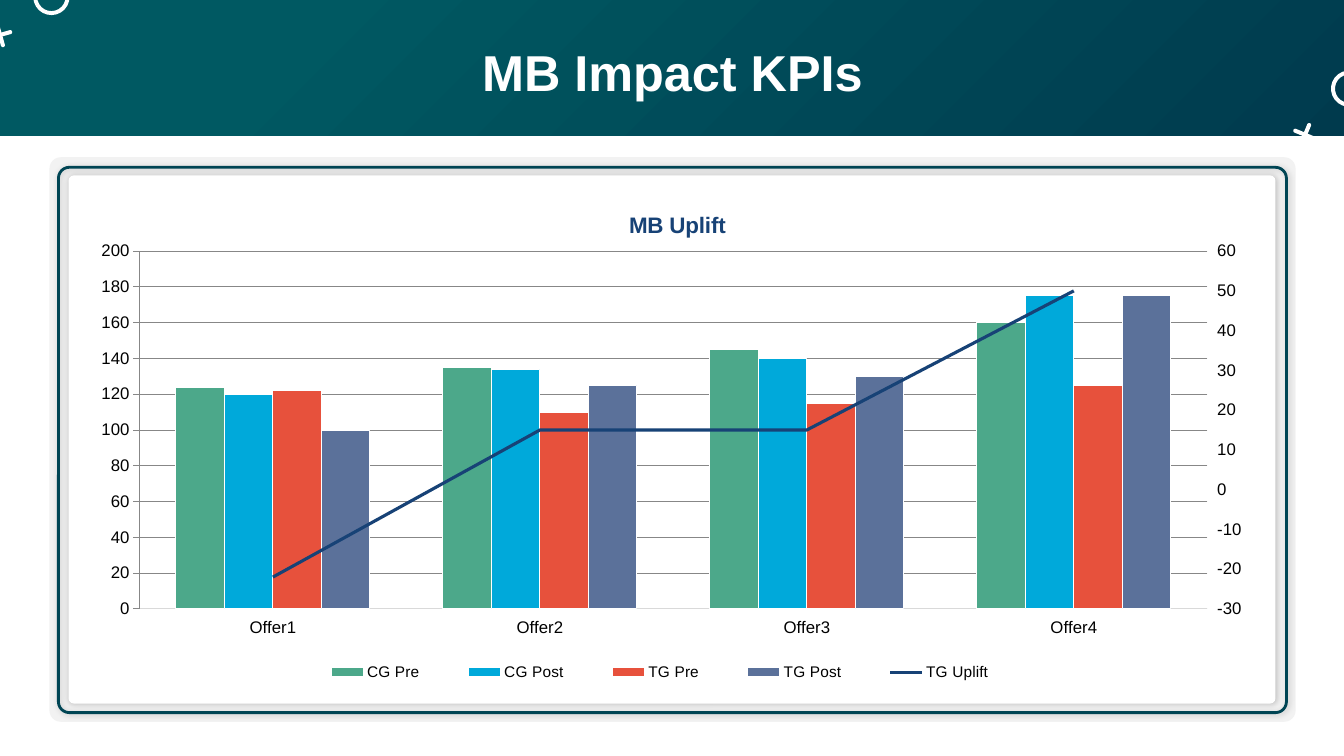
from pptx import Presentation
from pptx.chart.axis import ValueAxis
from pptx.chart.data import CategoryChartData
from pptx.dml.color import RGBColor
from pptx.enum.chart import (XL_CHART_TYPE, XL_LEGEND_POSITION, XL_MARKER_STYLE,
                             XL_TICK_LABEL_POSITION, XL_TICK_MARK)
from pptx.enum.shapes import MSO_SHAPE
from pptx.enum.text import MSO_ANCHOR, PP_ALIGN
from pptx.oxml import parse_xml
from pptx.oxml.ns import nsdecls, qn
from pptx.util import Inches, Pt

RECT, ROUND, DONUT = MSO_SHAPE.RECTANGLE, MSO_SHAPE.ROUNDED_RECTANGLE, MSO_SHAPE.DONUT
COLUMNS = XL_CHART_TYPE.COLUMN_CLUSTERED
TICK_NONE, TICK_OUT = XL_TICK_MARK.NONE, XL_TICK_MARK.OUTSIDE
LABELS_LOW, LABELS_HIGH = XL_TICK_LABEL_POSITION.LOW, XL_TICK_LABEL_POSITION.HIGH
LEGEND_BOTTOM, NO_MARKER = XL_LEGEND_POSITION.BOTTOM, XL_MARKER_STYLE.NONE
CENTER, MIDDLE = PP_ALIGN.CENTER, MSO_ANCHOR.MIDDLE

FONT = "Arial"
SLIDE_W, SLIDE_H = 13.33, 7.5
COLORS = {"white": "FFFFFF", "black": "000000", "night": "002942", "teal": "005962",
          "panel": "F2F2F2", "frame": "004554", "axis": "D9D9D9", "navy": "174276"}
OFFERS = ["Offer1", "Offer2", "Offer3", "Offer4"]
BARS = [("CG Pre", [124, 135, 145, 160], "4CA88A"),
        ("CG Post", [120, 134, 140, 175], "00A9DA"),
        ("TG Pre", [122, 110, 115, 125], "E7513C"),
        ("TG Post", [100, 125, 130, 175], "5B719A")]
UPLIFT = ("TG Uplift", [-22, 15, 15, 50])


def rgb(name):
    """Return the colour for a palette name or a hex string."""
    return RGBColor.from_string(COLORS.get(name, name))


def area(x, y, w, h):
    """Turn percentages of the slide into left, top, width, height."""
    return [Inches(v * side / 100) for v, side in
            zip((x, y, w, h), (SLIDE_W, SLIDE_H, SLIDE_W, SLIDE_H))]


def style_font(font, size, color, bold=False):
    """Apply size, weight, face and colour to a font."""
    for name, value in {"size": Pt(size), "bold": bold, "name": FONT}.items():
        setattr(font, name, value)
    font.color.rgb = rgb(color)


def style_line(line, color=None, width=0.75):
    """Colour a line, or hide it when no colour is given."""
    if color is None:
        line.fill.background()
    else:
        line.color.rgb, line.width = rgb(color), Pt(width)


def add_block(s, kind, box, fill=None, line=None, adj=None, rotation=0):
    """Add a preset shape without a shadow."""
    sp = s.shapes.add_shape(kind, *area(*box))
    sp.shadow.inherit = False
    sp.rotation = rotation
    if adj is not None:
        sp.adjustments[0] = adj
    if fill is None:
        sp.fill.background()
    else:
        sp.fill.solid()
        sp.fill.fore_color.rgb = rgb(fill)
    style_line(sp.line, line, 2)
    return sp


def add_soft_shadow(sp):
    """Give a shape a soft outer shadow."""
    effects = sp._element.spPr.find(qn("a:effectLst"))
    effects.append(parse_xml(
        f'<a:outerShdw {nsdecls("a")} blurRad="{Pt(4)}" dist="{Pt(1)}" dir="2700000" '
        f'rotWithShape="0"><a:srgbClr val="{COLORS["black"]}"><a:alpha val="20000"/>'
        '</a:srgbClr></a:outerShdw>'))


def add_backdrop(s):
    """Cover the slide with a radial gradient."""
    sp = add_block(s, RECT, (0, 0, 100, 100), "teal")
    stops = "".join(f'<a:gs pos="{pos * 1000}"><a:srgbClr val="{COLORS[name]}"/></a:gs>'
                    for pos, name in ((0, "night"), (85, "teal"), (100, "teal")))
    solid = sp._element.spPr.find(qn("a:solidFill"))
    solid.getparent().replace(solid, parse_xml(
        f'<a:gradFill {nsdecls("a")} rotWithShape="1"><a:gsLst>{stops}</a:gsLst>'
        '<a:path path="circle"><a:fillToRect l="100000" t="100000"/></a:path></a:gradFill>'))


def add_motif(s, ring, cross, rotation):
    """Draw a white ring and a white cross around their centres."""
    parts = [(DONUT, ring, 0.36, 0.36, 0.11),
             (ROUND, cross, 0.04, 0.25, 0.5), (ROUND, cross, 0.25, 0.04, 0.5)]
    for kind, (cx, cy), w, h, adj in parts:
        w, h = w / SLIDE_W * 100, h / SLIDE_H * 100
        add_block(s, kind, (cx - w / 2, cy - h / 2, w, h), "white", adj=adj, rotation=rotation)


def add_title(s, text):
    """Write the centred slide heading."""
    tf = s.shapes.add_textbox(*area(3.68, 5.2, 92.72, 8.53)).text_frame
    tf.word_wrap, tf.vertical_anchor = True, MIDDLE
    p = tf.paragraphs[0]
    p.alignment = CENTER
    r = p.add_run()
    r.text = text
    style_font(r.font, 36, "white", True)


def set_layout(parent, index, **values):
    """Place a chart part by shares of the chart's size."""
    for old in parent.findall(qn("c:layout")):
        parent.remove(old)
    target = '<c:layoutTarget val="outer"/>' if parent.tag == qn("c:plotArea") else ""
    modes = '<c:xMode val="edge"/><c:yMode val="edge"/>'
    sizes = "".join(f'<c:{k} val="{v}"/>' for k, v in values.items())
    parent.insert(index, parse_xml(
        f'<c:layout {nsdecls("c")}><c:manualLayout>{target}{modes}{sizes}'
        '</c:manualLayout></c:layout>'))


def style_axis(axis, tick, labels, line=None, scale=None):
    """Format an axis and, where given, its minimum, maximum and step."""
    axis.major_tick_mark, axis.minor_tick_mark = tick, TICK_NONE
    axis.tick_label_position = labels
    style_font(axis.tick_labels.font, 12, "black")
    style_line(axis.format.line, line)
    if scale:
        axis.minimum_scale, axis.maximum_scale, axis.major_unit = scale


def move_uplift_to_line(chart):
    """Move the last series to a line on a second axis and return that axis."""
    bar = chart.element.xpath(".//c:barChart")[0]
    ser = bar.findall(qn("c:ser"))[-1]
    for node in ser.findall(qn("c:invertIfNegative")):
        ser.remove(node)
    line = parse_xml(
        f'<c:lineChart {nsdecls("c")}><c:grouping val="standard"/><c:varyColors val="0"/>'
        '<c:marker val="1"/><c:axId val="5001"/><c:axId val="5002"/></c:lineChart>')
    line.insert(2, ser)
    bar.addnext(line)
    last = chart.value_axis._element
    for tag, own, other, side, hidden, cross in (("valAx", 5002, 5001, "r", 0, "max"),
                                                 ("catAx", 5001, 5002, "b", 1, "autoZero")):
        last.addnext(parse_xml(
            f'<c:{tag} {nsdecls("c")}><c:axId val="{own}"/><c:scaling>'
            f'<c:orientation val="minMax"/></c:scaling><c:delete val="{hidden}"/>'
            f'<c:axPos val="{side}"/><c:crossAx val="{other}"/>'
            f'<c:crosses val="{cross}"/></c:{tag}>'))
    return ValueAxis(chart.element.xpath(".//c:valAx")[-1])


def add_uplift_chart(s):
    """Add the columns with the uplift line."""
    data = CategoryChartData()
    data.categories = OFFERS
    for name, values, *_ in BARS + [UPLIFT]:
        data.add_series(name, values)
    chart = s.shapes.add_chart(COLUMNS, *area(6.68, 24.67, 86.57, 66.93), data).chart
    style_font(chart.font, 12, "black")
    right_axis = move_uplift_to_line(chart)
    columns, lines = chart.plots
    columns.gap_width, columns.overlap, columns.vary_by_categories = 150, 0, False
    for series, (_, _, color) in zip(columns.series, BARS):
        series.invert_if_negative = False
        series.format.fill.solid()
        series.format.fill.fore_color.rgb = rgb(color)
        style_line(series.format.line, "white")
    uplift = lines.series[0]
    uplift.smooth, uplift.marker.style = False, NO_MARKER
    style_line(uplift.format.line, "navy", 2.25)

    style_axis(chart.category_axis, TICK_NONE, LABELS_LOW, "axis")
    style_axis(chart.value_axis, TICK_NONE, LABELS_LOW, scale=(0, 200, 20))
    style_axis(right_axis, TICK_OUT, LABELS_HIGH, scale=(-30, 60, 10))
    style_line(chart.value_axis.major_gridlines.format.line, "panel", 0.25)

    chart.has_title = True
    title = chart.chart_title
    title.text_frame.text = "MB Uplift"
    style_font(title.text_frame.paragraphs[0].runs[0].font, 16, "navy", True)
    set_layout(title._element, 1, x=0.46, y=0.04)
    chart.has_legend = True
    legend = chart.legend
    legend.position, legend.include_in_layout = LEGEND_BOTTOM, False
    style_font(legend.font, 11, "black")
    set_layout(legend._element, 1, x=0.17, y=0.93, w=0.64, h=0.06)
    set_layout(chart.element.xpath(".//c:plotArea")[0], 0, x=0.01, y=0.11, w=0.98, h=0.78)


def main():
    """Build the slide and save it."""
    prs = Presentation()
    prs.slide_width, prs.slide_height = Inches(SLIDE_W), Inches(SLIDE_H)
    s = prs.slides.add_slide(prs.slide_layouts[6])
    add_backdrop(s)
    add_block(s, RECT, (0, 18, 100, 82), "white")
    add_motif(s, (3.83, -0.4), (0, 4.63), 344.2)
    add_motif(s, (100.38, 11.73), (97.1, 17.83), 112.5)
    add_title(s, "MB Impact KPIs")
    add_block(s, ROUND, (3.68, 20.8, 92.72, 74.67), "panel", adj=0.02)
    add_soft_shadow(add_block(s, ROUND, (5.1, 23.2, 89.8, 69.87), "white", adj=0.01))
    add_soft_shadow(add_block(s, ROUND, (4.35, 22.13, 91.37, 72.13), line="frame", adj=0.02))
    add_uplift_chart(s)
    prs.save("out.pptx")


if __name__ == "__main__":
    main()
